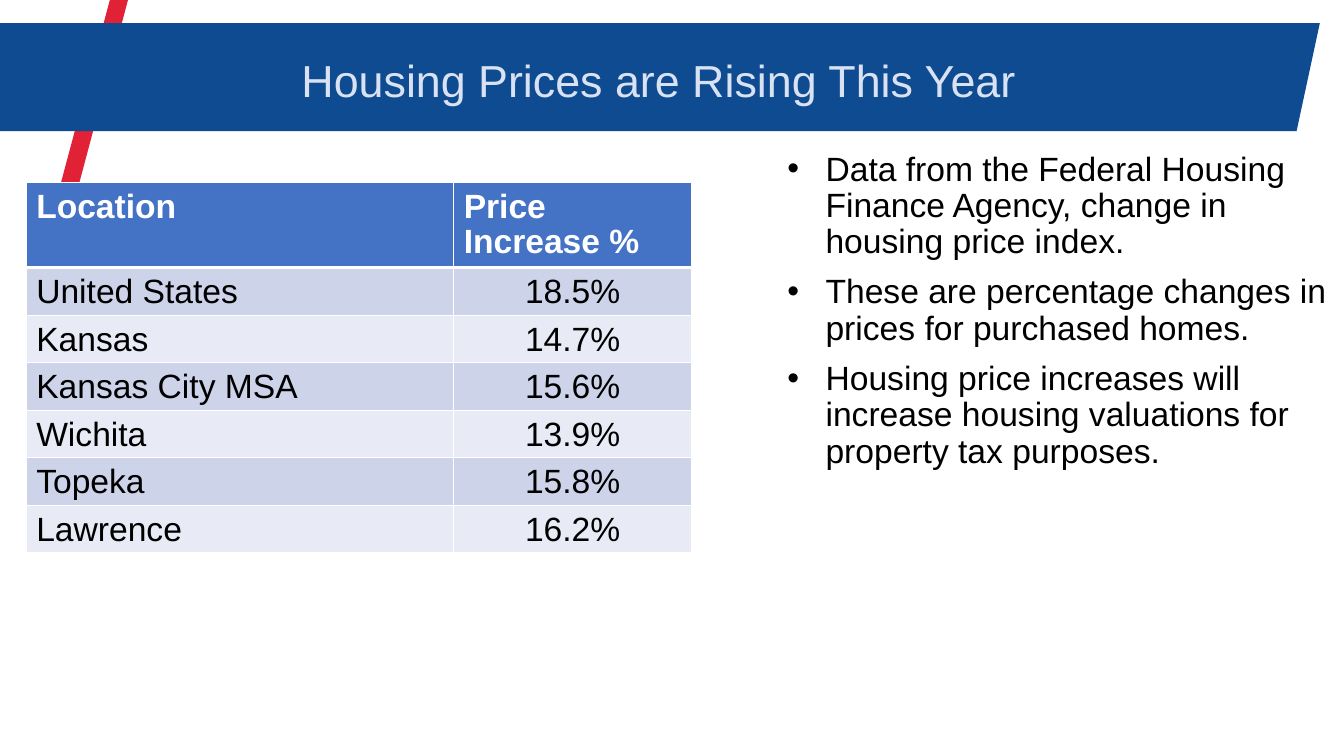
"""Build a slide on housing price increases with a table and bullet notes."""
from dataclasses import dataclass

from lxml import etree
from pptx import Presentation
from pptx import util as u
from pptx.dml.color import RGBColor
from pptx.enum import text
from pptx.oxml import ns

TITLE = "Housing Prices are Rising This Year"
HEADER = ("Location", "Price Increase %")
PRICES = [
    ("United States", "18.5%"),
    ("Kansas", "14.7%"),
    ("Kansas City MSA", "15.6%"),
    ("Wichita", "13.9%"),
    ("Topeka", "15.8%"),
    ("Lawrence", "16.2%"),
]
NOTES = [
    "Data from the Federal Housing Finance Agency, change in housing price index.",
    "These are percentage changes in prices for purchased homes.",
    "Housing price increases will increase housing valuations for property tax purposes.",
]


@dataclass(frozen=True)
class Theme:
    """Colours, font and type sizes."""
    font: str = "Arial"
    title_size: int = 32
    body_size: int = 24
    white: str = "FFFFFF"
    black: str = "000000"
    title: str = "D8E2F3"
    stripe: str = "E02136"
    banner: str = "0F4B90"
    header: str = "4472C4"
    bands: tuple = ("CDD4EA", "E8EBF5")


T = Theme()
WIDTH, HEIGHT = 13.33, 7.5
MARGIN = 0.26
BANNER_TOP, BANNER_BOTTOM = 0.23, 1.3
TABLE_TOP, ROW = 1.81, 0.41
COLS = (4.24, 2.36)
NOTES_LEFT, NOTES_TOP = 7.59, 1.46
STRIPE = [(0.56, 1.98), (1.09, 0), (1.27, 0), (0.74, 1.99)]
BANNER = [(0, BANNER_TOP), (13.09, BANNER_TOP), (12.86, BANNER_BOTTOM), (0, BANNER_BOTTOM)]


def write(p, words, size=T.body_size, color=T.black, bold=False, align=None, spacing=None):
    """Write formatted words into a paragraph."""
    r = p.add_run()
    r.text = words
    p.alignment = align
    p.line_spacing = spacing
    r.font.name = T.font
    r.font.size = u.Pt(size)
    r.font.bold = bold
    r.font.color.rgb = RGBColor.from_string(color)


def outline(s, points, color):
    """Draw a filled polygon from points in inches."""
    corners = [(u.Inches(x), u.Inches(y)) for x, y in points]
    builder = s.shapes.build_freeform(*corners[0])
    builder.add_line_segments(corners[1:], close=True)
    sp = builder.convert_to_shape()
    sp.shadow.inherit = False
    sp.fill.solid()
    sp.fill.fore_color.rgb = RGBColor.from_string(color)
    sp.line.fill.background()


def bullet(p):
    """Give a paragraph a hanging bullet."""
    props = p._p.get_or_add_pPr()
    props.set("marL", str(u.Inches(0.5)))
    props.set("indent", str(u.Inches(-0.38)))
    color = etree.SubElement(props, ns.qn("a:buClr"))
    etree.SubElement(color, ns.qn("a:srgbClr"), val=T.black)
    etree.SubElement(props, ns.qn("a:buFont"), typeface=T.font)
    etree.SubElement(props, ns.qn("a:buChar"), char="•")


def borders(cell, **widths):
    """Draw white cell borders with widths in points by side."""
    props = cell._tc.get_or_add_tcPr()
    for side, width in widths.items():
        line = etree.SubElement(props, ns.qn(f"a:ln{side}"), w=str(u.Pt(width)))
        fill = etree.SubElement(line, ns.qn("a:solidFill"))
        etree.SubElement(fill, ns.qn("a:srgbClr"), val=T.white)


def add_title(s):
    """Place the title over the banner."""
    title = s.shapes.title
    title.left, title.top = u.Inches(MARGIN), u.Inches(0.45)
    title.width, title.height = u.Inches(12.55), u.Inches(0.74)
    tf = title.text_frame
    tf.vertical_anchor = text.MSO_ANCHOR.MIDDLE
    write(tf.paragraphs[0], TITLE, size=T.title_size, color=T.title,
          align=text.PP_ALIGN.CENTER, spacing=0.9)
    s.shapes._spTree.append(title._element)


def add_notes(s):
    """Add the bullet column at the right."""
    box = s.shapes.add_textbox(u.Inches(NOTES_LEFT), u.Inches(NOTES_TOP),
                               u.Inches(WIDTH - NOTES_LEFT), u.Inches(4.76))
    tf = box.text_frame
    tf.word_wrap = True
    for i, note in enumerate(NOTES):
        p = tf.add_paragraph() if i else tf.paragraphs[0]
        bullet(p)
        write(p, note, spacing=0.9)
        p.space_before = u.Pt(10 if i else 0)


def add_prices(s):
    """Add the table of price increases."""
    rows = [HEADER, *PRICES]
    table = s.shapes.add_table(len(rows), len(COLS), u.Inches(MARGIN), u.Inches(TABLE_TOP),
                               u.Inches(sum(COLS)), u.Inches(ROW * len(rows))).table
    for column, width in zip(table.columns, COLS):
        column.width = u.Inches(width)
    for i, row in enumerate(rows):
        head = i == 0
        fill = T.header if head else T.bands[(i - 1) % 2]
        for j, words in enumerate(row):
            cell = table.cell(i, j)
            cell.margin_top, cell.margin_bottom = u.Inches(0.08), u.Inches(0.02)
            borders(cell, L=1, R=1, T=3 if i == 1 else 1, B=3 if head else 1)
            cell.fill.solid()
            cell.fill.fore_color.rgb = RGBColor.from_string(fill)
            write(cell.text_frame.paragraphs[0], words, bold=head, spacing=0.93,
                  color=T.white if head else T.black,
                  align=text.PP_ALIGN.CENTER if j and not head else None)


def main():
    """Assemble and save the slide."""
    prs = Presentation()
    prs.slide_width, prs.slide_height = u.Inches(WIDTH), u.Inches(HEIGHT)
    s = prs.slides.add_slide(prs.slide_layouts[5])
    outline(s, STRIPE, T.stripe)
    outline(s, BANNER, T.banner)
    add_title(s)
    add_notes(s)
    add_prices(s)
    prs.save("out.pptx")


if __name__ == "__main__":
    main()
